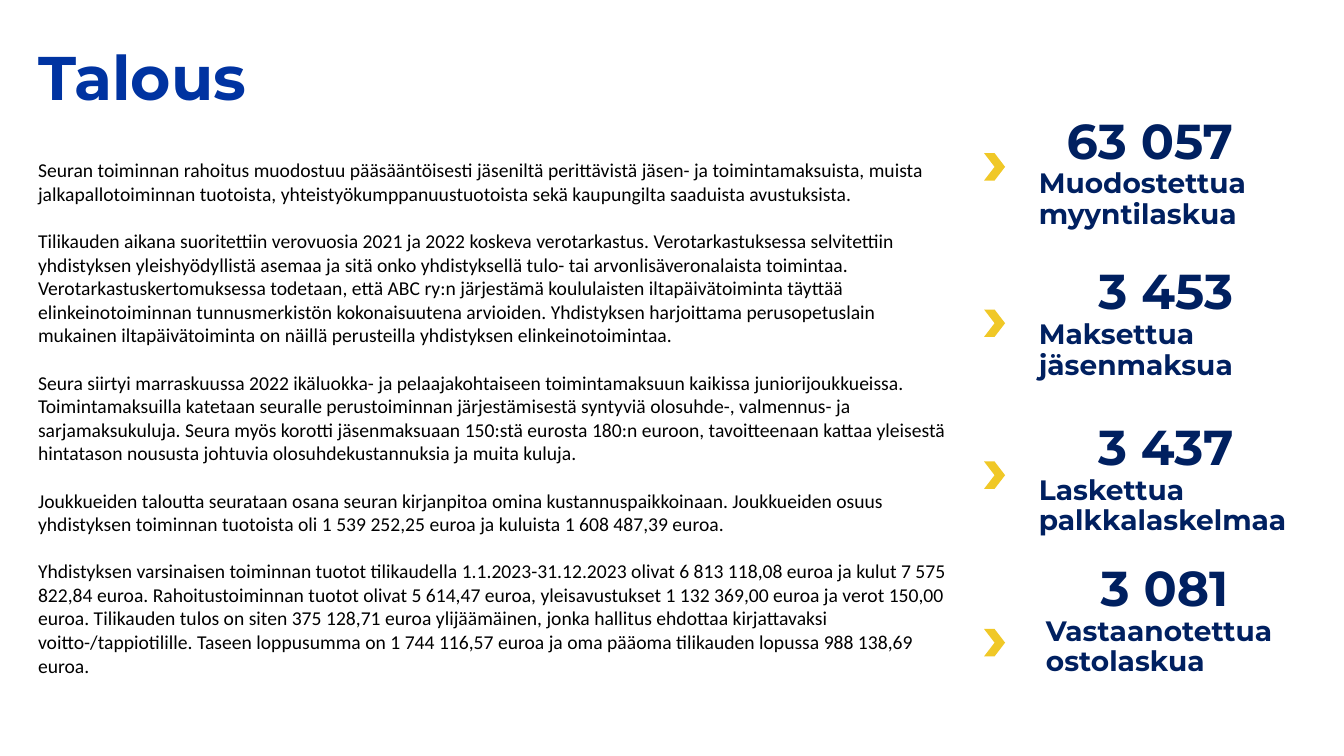
from pptx import Presentation, util as u
from pptx.dml.color import RGBColor
from pptx.enum import shapes, text

TITLE = {"name": "Montserrat", "size": u.Pt(44), "bold": True}
BODY = {"name": "Calibri", "size": u.Pt(14), "bold": False}
FIGURE = {"name": "Montserrat", "size": u.Pt(35), "bold": True}
LABEL = {"name": "Montserrat", "size": u.Pt(20), "bold": True}
BLUE, NAVY, YELLOW, BLACK = "0033A1", "002060", "F0C827", "000000"

FINANCES = [
    "Seuran toiminnan rahoitus muodostuu pääsääntöisesti jäseniltä perittävistä jäsen- ja toimintamaksuista, "
    "muista jalkapallotoiminnan tuotoista, yhteistyökumppanuustuotoista sekä kaupungilta saaduista avustuksista.",
    "Tilikauden aikana suoritettiin verovuosia 2021 ja 2022 koskeva verotarkastus. Verotarkastuksessa selvitettiin "
    "yhdistyksen yleishyödyllistä asemaa ja sitä onko yhdistyksellä tulo- tai arvonlisäveronalaista toimintaa. "
    "Verotarkastuskertomuksessa todetaan, että ABC ry:n järjestämä koululaisten iltapäivätoiminta täyttää "
    "elinkeinotoiminnan tunnusmerkistön kokonaisuutena arvioiden. Yhdistyksen harjoittama perusopetuslain "
    "mukainen iltapäivätoiminta on näillä perusteilla yhdistyksen elinkeinotoimintaa.",
    "Seura siirtyi marraskuussa 2022 ikäluokka- ja pelaajakohtaiseen toimintamaksuun kaikissa juniorijoukkueissa. "
    "Toimintamaksuilla katetaan seuralle perustoiminnan järjestämisestä syntyviä olosuhde-, valmennus- ja "
    "sarjamaksukuluja. Seura myös korotti jäsenmaksuaan 150:stä eurosta 180:n euroon, tavoitteenaan kattaa "
    "yleisestä hintatason noususta johtuvia olosuhdekustannuksia ja muita kuluja.",
    "Joukkueiden taloutta seurataan osana seuran kirjanpitoa omina kustannuspaikkoinaan. Joukkueiden osuus "
    "yhdistyksen toiminnan tuotoista oli 1 539 252,25 euroa ja kuluista 1 608 487,39 euroa.",
    "Yhdistyksen varsinaisen toiminnan tuotot tilikaudella 1.1.2023-31.12.2023 olivat 6 813 118,08 euroa ja kulut "
    "7 575 822,84 euroa. Rahoitustoiminnan tuotot olivat 5 614,47 euroa, yleisavustukset 1 132 369,00 euroa ja "
    "verot 150,00 euroa. Tilikauden tulos on siten 375 128,71 euroa ylijäämäinen, jonka hallitus ehdottaa "
    "kirjattavaksi voitto-/tappiotilille. Taseen loppusumma on 1 744 116,57 euroa ja oma pääoma tilikauden lopussa "
    "988 138,69 euroa.",
]

STATS = [
    ("63 057", "Muodostettua myyntilaskua", (25.93, 2.82, 6.1, 3.15), 3.86),
    ("3 453", "Maksettua jäsenmaksua", (25.93, 6.62, 6.9, 3.15), 7.8),
    ("3 437", "Laskettua palkkalaskelmaa", (25.93, 10.55, 6.9, 3.15), 11.63),
    ("3 081", "Vastaanotettua ostolaskua", (26.11, 14.1, 6.48, 3.15), 15.85),
]


def color(value):
    """Turn a hex string into a colour."""
    return RGBColor.from_string(value)


def add_frame(slide, box, anchor=text.MSO_ANCHOR.TOP):
    """Add a wrapping text frame in the given box."""
    frame = slide.shapes.add_textbox(*map(u.Cm, box)).text_frame
    frame.word_wrap = True
    frame.vertical_anchor = anchor
    return frame


def write(paragraph, words, font_values, ink, **layout):
    """Write one paragraph with its font, colour and paragraph settings."""
    paragraph.text = words
    for target, values in ((paragraph.font, font_values), (paragraph, layout)):
        for key, value in values.items():
            setattr(target, key, value)
    paragraph.font.color.rgb = color(ink)


def add_heading(slide, box):
    """Place the slide heading."""
    frame = add_frame(slide, box, text.MSO_ANCHOR.MIDDLE)
    write(frame.paragraphs[0], "Talous", TITLE, BLUE, line_spacing=0.9)


def add_finances(slide, box):
    """Place the running text on the finances."""
    frame = add_frame(slide, box)
    for index, words in enumerate(FINANCES):
        paragraph = frame.add_paragraph() if index else frame.paragraphs[0]
        write(paragraph, words, BODY, BLACK, space_before=u.Pt(17 if index else 0))


def add_stat(slide, box, figure, label, chevron_top):
    """Place a key figure over its label, with a chevron to the left."""
    frame = add_frame(slide, box)
    write(frame.paragraphs[0], figure, FIGURE, NAVY, line_spacing=0.9, alignment=text.PP_ALIGN.CENTER)
    write(frame.add_paragraph(), label, LABEL, NAVY, line_spacing=0.9)
    chevron = slide.shapes.add_shape(
        shapes.MSO_SHAPE.CHEVRON, *map(u.Cm, (24.8, chevron_top, 0.53, 0.69)))
    chevron.shadow.inherit = False
    chevron.fill.solid()
    chevron.fill.fore_color.rgb = color(YELLOW)
    chevron.line.fill.background()


def main():
    """Build the finance slide and save it."""
    deck = Presentation()
    deck.slide_width, deck.slide_height = u.Cm(33.87), u.Cm(19.05)
    slide = deck.slides.add_slide(deck.slide_layouts[6])
    add_heading(slide, (0.71, 0.2, 30.18, 3.68))
    add_finances(slide, (0.71, 3.86, 23.62, 14.1))
    for figure, label, box, chevron_top in STATS:
        add_stat(slide, box, figure, label, chevron_top)
    deck.save("out.pptx")


if __name__ == "__main__":
    main()
